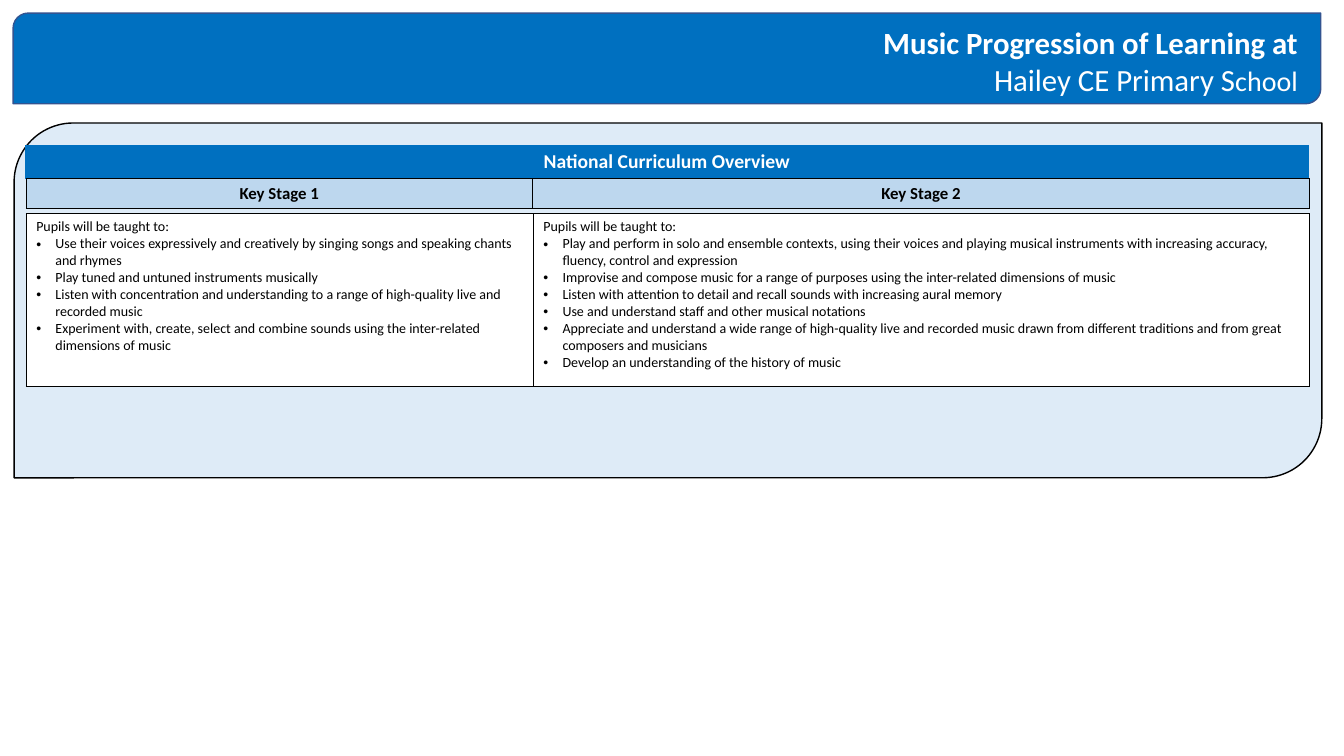
from dataclasses import dataclass

from lxml.etree import SubElement
from pptx import Presentation
from pptx.dml.color import RGBColor
from pptx.enum.shapes import MSO_SHAPE as Preset
from pptx.enum.text import MSO_AUTO_SIZE as AutoSize, PP_ALIGN as Align
from pptx.oxml.ns import qn
from pptx.util import Inches, Pt


@dataclass(frozen=True)
class Theme:
    font: str = "Calibri"
    blue: str = "0070C0"
    banner_line: str = "325491"
    panel: str = "DEEBF7"
    stage: str = "BDD7EE"
    white: str = "FFFFFF"
    black: str = "000000"
    title_size: int = 22
    title_end_size: int = 20
    overview_size: int = 14
    stage_size: int = 12
    body_size: int = 10
    border: float = 0.5
    bullet_indent: float = 0.19


THEME = Theme()

# Content: title lines hold (text, size, bold) runs
TITLE = [
    [("Music Progression of Learning at", THEME.title_size, True)],
    [("Hailey CE Primary S", THEME.title_size, False),
     ("chool", THEME.title_end_size, False)],
]
OVERVIEW = "National Curriculum Overview"
INTRO = "Pupils will be taught to:"
STAGES = {
    "Key Stage 1": [
        "Use their voices expressively and creatively by singing songs and speaking chants and rhymes",
        "Play tuned and untuned instruments musically",
        "Listen with concentration and understanding to a range of high-quality live and recorded music",
        "Experiment with, create, select and combine sounds using the inter-related dimensions of music",
    ],
    "Key Stage 2": [
        "Play and perform in solo and ensemble contexts, using their voices and playing musical "
        "instruments with increasing accuracy, fluency, control and expression",
        "Improvise and compose music for a range of purposes using the inter-related dimensions of music",
        "Listen with attention to detail and recall sounds with increasing aural memory",
        "Use and understand staff and other musical notations",
        "Appreciate and understand a wide range of high-quality live and recorded music drawn from "
        "different traditions and from great composers and musicians",
        "Develop an understanding of the history of music",
    ],
}

# Layout in inches: left, top, width, height
BANNER = (0.13, 0.13, 12.97, 0.9)
TITLE_BOX = (6.42, 0.19, 6.55, 0.84)
PANEL = (0.14, 1.22, 12.97, 3.52)
TABLE_WIDTH = 12.73


def add_run(paragraph, text, size, color, bold=False):
    run = paragraph.add_run()
    run.text = text
    run.font.name = THEME.font
    run.font.size = Pt(size)
    run.font.bold = bold
    run.font.color.rgb = RGBColor.from_string(color)


def next_paragraph(frame, index):
    return frame.add_paragraph() if index else frame.paragraphs[0]


def add_block(slide, box, fill, line):
    shape = slide.shapes.add_shape(Preset.ROUND_2_DIAG_RECTANGLE, *map(Inches, box))
    shape.shadow.inherit = False
    shape.fill.solid()
    shape.fill.fore_color.rgb = RGBColor.from_string(fill)
    shape.line.color.rgb = RGBColor.from_string(line)
    shape.line.width = Pt(1)


def set_borders(cell, color):
    properties = cell._tc.get_or_add_tcPr()
    for side in ("a:lnL", "a:lnR", "a:lnT", "a:lnB"):
        line = SubElement(properties, qn(side), w=str(Pt(THEME.border)))
        if color:
            solid = SubElement(line, qn("a:solidFill"))
            SubElement(solid, qn("a:srgbClr"), val=color)
        else:
            SubElement(line, qn("a:noFill"))


def add_row_table(slide, left, top, height, first_width, fill, border=None):
    """Add a one-row table and return its styled cells."""
    widths = [first_width]
    if first_width < TABLE_WIDTH:
        widths.append(TABLE_WIDTH - first_width)
    table = slide.shapes.add_table(
        1, len(widths), *map(Inches, (left, top, TABLE_WIDTH, height))).table
    table.first_row = table.horz_banding = False
    table.rows[0].height = Inches(height)
    for column, width in zip(table.columns, widths):
        column.width = Inches(width)
    cells = list(table.rows[0].cells)
    for cell in cells:
        set_borders(cell, border)
        cell.fill.solid()
        cell.fill.fore_color.rgb = RGBColor.from_string(fill)
    return cells


def add_heading(cell, text, size, color):
    paragraph = cell.text_frame.paragraphs[0]
    paragraph.alignment = Align.CENTER
    add_run(paragraph, text, size, color, bold=True)


def add_bullet(paragraph):
    indent = Inches(THEME.bullet_indent)
    properties = paragraph._p.get_or_add_pPr()
    properties.set("marL", str(indent))
    properties.set("indent", str(-indent))
    SubElement(properties, qn("a:buFont"), typeface="Arial")
    SubElement(properties, qn("a:buChar"), char="•")


def main():
    presentation = Presentation()
    presentation.slide_width = Inches(13.33)
    presentation.slide_height = Inches(7.5)
    slide = presentation.slides.add_slide(presentation.slide_layouts[6])

    # Title banner
    add_block(slide, BANNER, THEME.blue, THEME.banner_line)
    title_box = slide.shapes.add_textbox(*map(Inches, TITLE_BOX))
    frame = title_box.text_frame
    frame.word_wrap = True
    frame.auto_size = AutoSize.SHAPE_TO_FIT_TEXT
    for index, runs in enumerate(TITLE):
        paragraph = next_paragraph(frame, index)
        paragraph.alignment = Align.RIGHT
        for text, size, bold in runs:
            add_run(paragraph, text, size, THEME.white, bold)

    # Panel with overview and key stage headings
    add_block(slide, PANEL, THEME.panel, THEME.black)
    overview, = add_row_table(slide, 0.25, 1.44, 0.33, TABLE_WIDTH, THEME.blue)
    add_heading(overview, OVERVIEW, THEME.overview_size, THEME.white)
    headings = add_row_table(slide, 0.26, 1.77, 0.3, 5.02, THEME.stage, THEME.black)
    for cell, stage in zip(headings, STAGES):
        add_heading(cell, stage, THEME.stage_size, THEME.black)

    # Learning aims for each key stage
    bodies = add_row_table(slide, 0.26, 2.12, 1.71, 5.03, THEME.white, THEME.black)
    for cell, aims in zip(bodies, STAGES.values()):
        for index, text in enumerate([INTRO, *aims]):
            paragraph = next_paragraph(cell.text_frame, index)
            if index:
                add_bullet(paragraph)
            add_run(paragraph, text, THEME.body_size, THEME.black)

    presentation.save("out.pptx")


if __name__ == "__main__":
    main()
